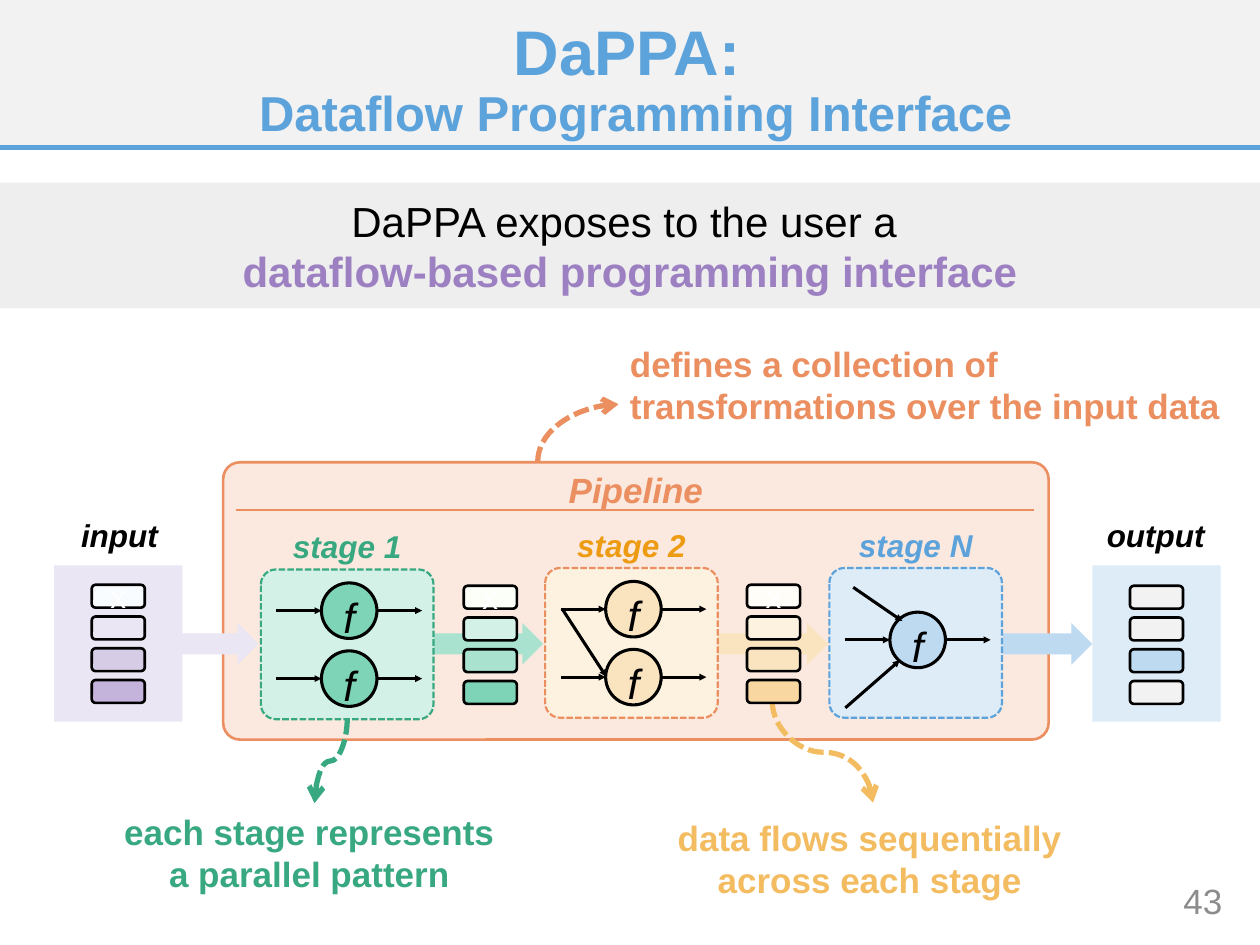
"""Build the slide on the DaPPA dataflow programming interface."""
from pptx import Presentation
from pptx import util as u
from pptx.dml.color import RGBColor
from pptx.enum import dml, shapes, text
from pptx.oxml import ns, xmlchemy

BLACK, BLUE, ORANGE, GREEN, YELLOW = "000000", "5CA2DB", "EB8F61", "38A881", "F3BC61"
GREY = "F2F2F2"
SHAPE = shapes.MSO_SHAPE
ALIGN, ANCHOR = text.PP_ALIGN, text.MSO_ANCHOR
BOLD = {"bold": True}
ITALIC = {"italic": True}
LABEL = {"bold": True, "italic": True}


def colour(value):
    return RGBColor.from_string(value)


def cm(*values):
    return [u.Cm(value) for value in values]


class Painter:
    def __init__(self, page, font):
        self.page = page
        self.font = font

    def outline(self, line, stroke):
        if stroke is None:
            line.fill.background()
            return
        tint, width, *dashed = stroke
        line.color.rgb = colour(tint)
        line.width = u.Pt(width)
        if dashed:
            line.dash_style = dml.MSO_LINE.SQUARE_DOT

    def words(self, box, spans, align=ALIGN.CENTER, anchor=ANCHOR.MIDDLE, spacing=None):
        frame = box.text_frame
        frame.word_wrap = True
        frame.vertical_anchor = anchor
        para = frame.paragraphs[0]
        para.alignment = align
        if spacing:
            para.line_spacing = spacing
        for index, (wording, size, tint, style) in enumerate(spans):
            if index:
                para.add_line_break()
            span = para.add_run()
            span.text = wording
            span.font.color.rgb = colour(tint)
            for name, value in {"name": self.font, "size": u.Pt(size), **style}.items():
                setattr(span.font, name, value)

    def label(self, place, spans, anchor=ANCHOR.TOP, **layout):
        box = self.page.shapes.add_textbox(*cm(*place))
        self.words(box, spans, anchor=anchor, **layout)

    def shape(self, kind, place, fill, stroke=None, corner=None):
        box = self.page.shapes.add_shape(kind, *cm(*place))
        box.shadow.inherit = False
        box.fill.solid()
        box.fill.fore_color.rgb = colour(fill)
        self.outline(box.line, stroke)
        if corner:
            box.adjustments[0] = corner
        return box

    def line(self, ends, stroke, head=None, size="med", kind=shapes.MSO_CONNECTOR.STRAIGHT):
        link = self.page.shapes.add_connector(kind, *cm(*ends))
        self.outline(link.line, stroke)
        props = link._element.spPr
        if head:
            tail = xmlchemy.OxmlElement("a:tailEnd")
            for name, value in {"type": head, "w": size, "len": size}.items():
                tail.set(name, value)
            props.find(ns.qn("a:ln")).append(tail)
        props.append(xmlchemy.OxmlElement("a:effectLst"))
        return link

    def arrow(self, *ends):
        self.line(ends, (BLACK, 1.75), "triangle", "sm")

    def curve(self, place, tint, turn, flips=(), preset="curvedConnector3"):
        left, top, width, height = place
        link = self.line((left, top, left + width, top + height), (tint, 3, "dash"),
                         "arrow", kind=shapes.MSO_CONNECTOR.CURVE)
        props = link._element.spPr
        props.find(ns.qn("a:prstGeom")).set("prst", preset)
        frame = props.find(ns.qn("a:xfrm"))
        frame.set("rot", str(turn * 60000))
        for flip in flips:
            frame.set(flip, "1")

    def stack(self, left, top, fills, mark=None):
        for row, fill in enumerate(fills):
            cell = self.shape(SHAPE.ROUNDED_RECTANGLE, (left, top + 0.64 * row, 1.07, 0.46),
                              fill, (BLACK, 1.5))
            if mark and row == 0:
                self.words(cell, [(mark, 18, "FFFFFF", {})])

    def function(self, left, top, fill):
        node = self.shape(SHAPE.OVAL, (left, top, 1.12, 1.12), fill, (BLACK, 1.75))
        self.words(node, [("f", 24, BLACK, ITALIC)], anchor=ANCHOR.TOP)
        node.rotation = 270
        frame = node.text_frame
        for side in ("left", "top", "right", "bottom"):
            setattr(frame, f"margin_{side}", 0)
        frame._txBody.bodyPr.set("vert", "vert")
        middle = top + 0.56
        self.arrow(left - 0.91, middle, left, middle)
        self.arrow(left + 1.13, middle, left + 2.03, middle)

    def stage(self, left, top, name, tint, edge, fill, node_fill, node_tops):
        self.shape(SHAPE.ROUNDED_RECTANGLE, (left, top, 3.48, 3.02), fill,
                   (edge, 1.25, "dash"), 0.1)
        self.label((left, top - 0.98, 3.48, 1.02), [(name, 18, tint, LABEL)])
        for offset in node_tops:
            self.function(left + 1.22, top + offset, node_fill)


def main():
    deck = Presentation()
    deck.slide_width, deck.slide_height = cm(25.4, 19.05)
    page = deck.slides.add_slide(deck.slide_layouts[6])
    paint = Painter(page, "Arial")

    paint.shape(SHAPE.RECTANGLE, (0, 0, 25.4, 2.97), GREY)
    paint.label((22.15, 17.65, 2.74, 1.02), [("43", 20, "8C8C8C", {})],
                anchor=ANCHOR.MIDDLE, align=ALIGN.RIGHT)
    paint.line((0, 2.97, 25.4, 2.97), (BLUE, 3))
    paint.label((0.46, 0.36, 24.71, 2.57),
                [("DaPPA: ", 36, BLUE, BOLD),
                 ("Dataflow Programming Interface", 28, BLUE, BOLD)],
                anchor=ANCHOR.MIDDLE, spacing=0.9)
    banner = paint.shape(SHAPE.RECTANGLE, (0, 3.68, 25.4, 2.54), "EEEEEE")
    paint.words(banner, [("DaPPA exposes to the user a ", 24, BLACK, {}),
                         ("dataflow-based programming interface", 24, "9C80C1", BOLD)])

    for left, fill in ((1.09, "EBE6F3"), (22.02, "DEECF8")):
        paint.shape(SHAPE.RECTANGLE, (left, 11.4, 2.59, 3.15), fill)
    for left, width, name in ((0.58, 3.66, "input"), (21.23, 4.14, "output")):
        paint.label((left, 10.28, width, 1.02), [(name, 18, BLACK, LABEL)])

    paint.shape(SHAPE.ROUNDED_RECTANGLE, (4.5, 9.32, 16.64, 5.59), "FBE9DF",
                (ORANGE, 1.5), 0.06)
    paint.label((4.5, 9.32, 16.64, 1.12), [("Pipeline", 20, ORANGE, LABEL)])
    paint.line((4.75, 10.29, 20.85, 10.29), (ORANGE, 1.25))

    for place, tint, align, lines in (
        ((12.45, 6.78, 14.91, 1.96), ORANGE, ALIGN.LEFT,
         ("defines a collection of ", "transformations over the input data")),
        ((-1.12, 16.21, 14.91, 1.96), GREEN, ALIGN.CENTER,
         ("each stage represents ", "a parallel pattern ")),
        ((13.21, 16.33, 8.84, 1.96), YELLOW, ALIGN.CENTER,
         ("data flows sequentially ", "across each stage ")),
    ):
        paint.label(place, [(wording, 20, tint, BOLD) for wording in lines], align=align)
    paint.curve((11.07, 7.92, 1.17, 1.63), ORANGE, 90, ("flipH", "flipV"), "curvedConnector2")
    paint.curve((5.82, 15.01, 1.7, 0.66), GREEN, 90)
    paint.curve((15.57, 14.15, 2.03, 2.03), YELLOW, 270, ("flipH",))

    for left, width, fill in ((3.66, 1.55, "EBE6F3"), (20.22, 1.8, "BEDAF1"),
                              (8.74, 2.21, "A9E2CE"), (14.48, 2.21, "FAE4C0")):
        paint.shape(SHAPE.RIGHT_ARROW, (left, 12.56, width, 0.84), fill)

    pair = (0.27, 1.64)
    for index, design in enumerate((
        (11.48, "stage 1", GREEN, GREEN, "D4F1E7", "7ED4B6", pair),
        (11.45, "stage 2", "ED9B12", ORANGE, "FDF2DF", "FAE4C0", pair),
        (11.45, "stage N", BLUE, BLUE, "DEECF8", "BEDAF1", (0.89,)),
    )):
        paint.stage(5.26 + 5.73 * index, *design)
    for ends in ((11.33, 12.27, 12.22, 13.64), (17.04, 14.27, 18.14, 13.31),
                 (17.2, 11.84, 18.19, 12.52)):
        paint.arrow(*ends)

    for left, top, fills, mark in (
        (1.85, 11.79, ("F8FCFF", "EBE6F3", "D7CCE6", "C4B3DA"), "x"),
        (9.35, 11.81, ("FBFFF8", "D4F1E7", "A9E2CE", "7ED4B6"), "x"),
        (15.06, 11.79, ("FFFDF8", "FDF2DF", "FAE4C0", "F8D7A0"), "x"),
        (22.78, 11.81, (GREY, GREY, "BEDAF1", GREY), None),
    ):
        paint.stack(left, top, fills, mark)

    deck.save("out.pptx")


if __name__ == "__main__":
    main()
